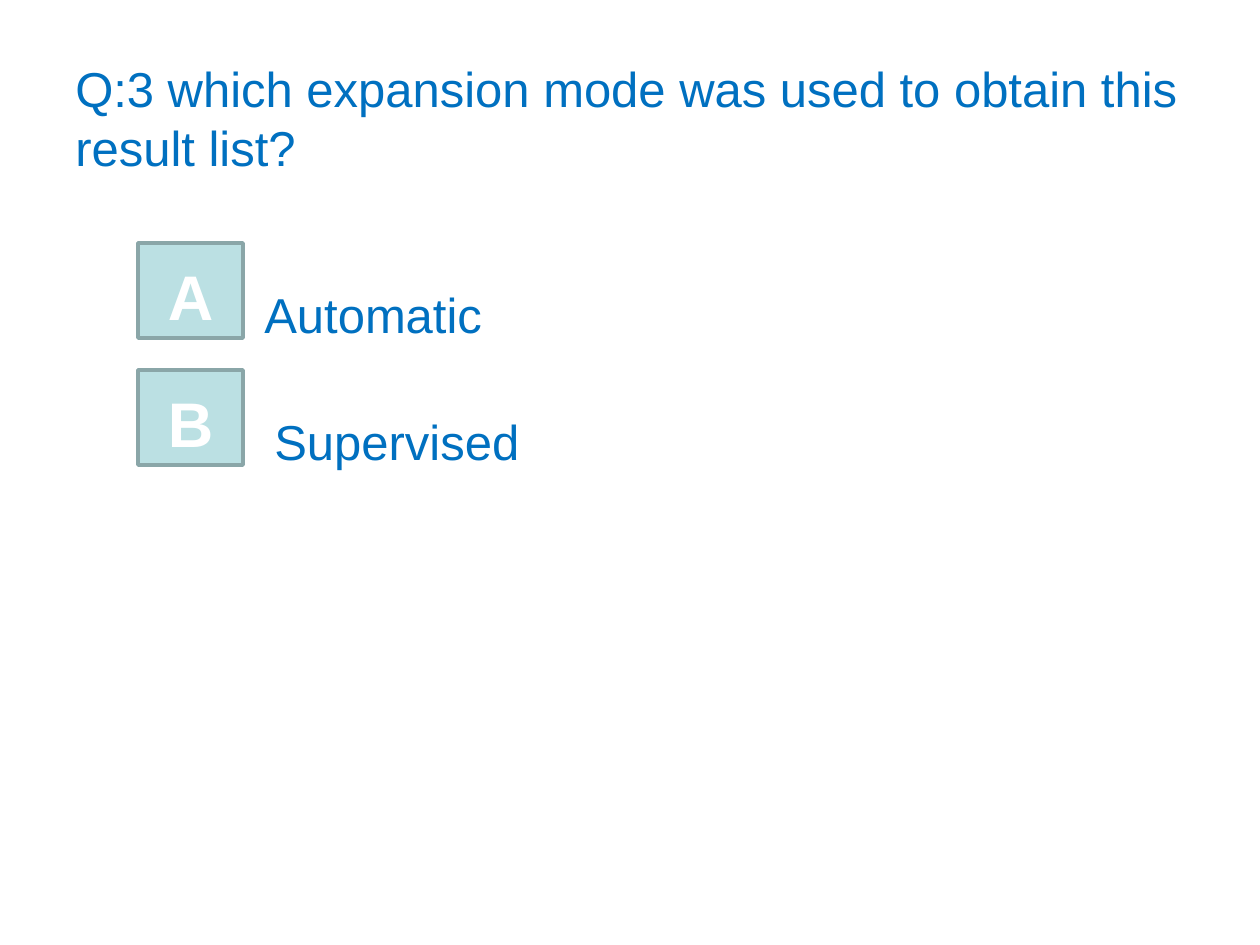
import pptx
import pptx.dml.color
import pptx.enum.shapes
import pptx.enum.text
import pptx.util

PX = 914400 // 126  # EMU per pixel
ANCHOR = pptx.enum.text.MSO_ANCHOR
ALIGN = pptx.enum.text.PP_ALIGN


def color(hex_string):
    return pptx.dml.color.RGBColor.from_string(hex_string)


class QuizSlide:
    font_name = "Arial"
    text_color = "0070C0"
    badge_fill = "BBE0E3"
    badge_line = "8AA6A8"
    badge_text = "FFFFFF"

    def __init__(self, presentation):
        self.slide = presentation.slides.add_slide(presentation.slide_layouts[6])

    def set_text(self, shape, text, size, font_color, anchor, top_inset, bottom_inset,
                 bold=False, align=ALIGN.LEFT):
        frame = shape.text_frame
        frame.word_wrap = True
        frame.vertical_anchor = anchor
        frame.margin_top = top_inset * PX
        frame.margin_bottom = bottom_inset * PX
        paragraph = frame.paragraphs[0]
        paragraph.text = text
        paragraph.alignment = align
        font = paragraph.font
        font.name = self.font_name
        font.size = pptx.util.Pt(size)
        font.bold = bold
        font.color.rgb = color(font_color)

    def label(self, box, text, anchor=ANCHOR.TOP, top_inset=6):
        shape = self.slide.shapes.add_textbox(*(length * PX for length in box))
        self.set_text(shape, text, 28, self.text_color, anchor, top_inset, 6)

    def badge(self, box, letter):
        shape = self.slide.shapes.add_shape(
            pptx.enum.shapes.MSO_SHAPE.ACTION_BUTTON_CUSTOM,
            *(length * PX for length in box))
        shape.shadow.inherit = False
        shape.fill.solid()
        shape.fill.fore_color.rgb = color(self.badge_fill)
        shape.line.color.rgb = color(self.badge_line)
        shape.line.width = pptx.util.Pt(2)
        self.set_text(shape, letter, 36, self.badge_text, ANCHOR.MIDDLE, 14, 4,
                      bold=True, align=ALIGN.CENTER)


def main():
    presentation = pptx.Presentation()
    presentation.slide_width = 1260 * PX
    presentation.slide_height = 945 * PX
    quiz = QuizSlide(presentation)

    # Question
    quiz.label((63, 38, 1134, 158),
               "Q:3 which expansion mode was used to obtain this result list?",
               anchor=ANCHOR.MIDDLE)

    # Answers: letter badge and label on each row
    answers = [("A", "Automatic", (252, 756)), ("B", "Supervised", (262, 726))]
    for row, (letter, answer, (left, width)) in enumerate(answers):
        top = 243 + row * 127
        quiz.badge((138, top, 105, 95), letter)
        quiz.label((left, top + 31, width, 70), answer, top_inset=11)

    presentation.save("out.pptx")


if __name__ == "__main__":
    main()
